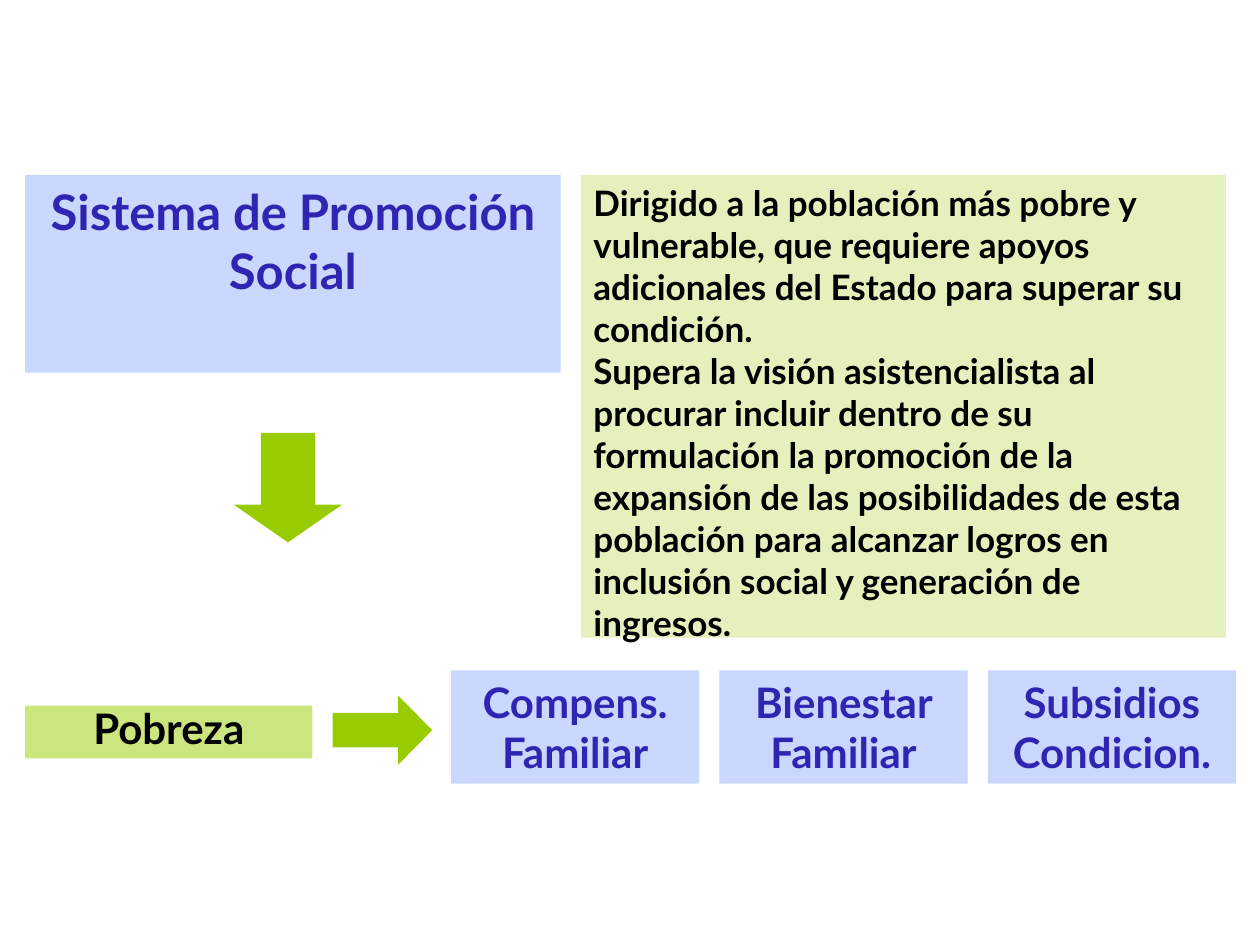
from dataclasses import dataclass
from typing import Optional

from lxml import etree
from pptx import Presentation
from pptx.dml.color import RGBColor
from pptx.enum.shapes import MSO_SHAPE
from pptx.enum.text import MSO_ANCHOR, MSO_AUTO_SIZE, PP_ALIGN
from pptx.oxml.ns import qn
from pptx.shapes.autoshape import Shape
from pptx.slide import Slide
from pptx.util import Emu, Pt

RECTANGLE = MSO_SHAPE.RECTANGLE
RIGHT_ARROW = MSO_SHAPE.RIGHT_ARROW
TOP, MIDDLE = MSO_ANCHOR.TOP, MSO_ANCHOR.MIDDLE
LEFT, CENTER = PP_ALIGN.LEFT, PP_ALIGN.CENTER
FIT_SHAPE = MSO_AUTO_SIZE.SHAPE_TO_FIT_TEXT

PX = 9144
SLIDE_WIDTH, SLIDE_HEIGHT = 1000, 750


@dataclass(frozen=True)
class Theme:
    font: str = "Lato"
    blue: str = "3366FF"
    green: str = "99CC00"
    indigo: str = "2F25B3"
    black: str = "000000"
    title_size: int = 28
    label_size: int = 24
    body_size: int = 20
    light: int = 26
    medium: int = 50


THEME = Theme()


@dataclass(frozen=True)
class Frame:
    left: int
    top: int
    width: int
    height: int


@dataclass(frozen=True)
class Panel:
    frame: Frame
    paragraphs: tuple[str, ...]
    size: int = THEME.label_size
    fill: str = THEME.blue
    opacity: int = THEME.light
    color: str = THEME.indigo
    alignment: PP_ALIGN = CENTER
    anchor: MSO_ANCHOR = TOP
    line_spacing: float = 1.0


@dataclass(frozen=True)
class Arrow:
    frame: Frame
    head: float
    rotation: int = 0


TITLE = Panel(Frame(20, 139, 425, 103), ("Sistema de Promoción Social",), THEME.title_size)
DESCRIPTION = Panel(
    Frame(461, 139, 512, 377),
    (
        "Dirigido a la población más pobre y vulnerable, que requiere apoyos "
        "adicionales del Estado para superar su condición.",
        "Supera la visión asistencialista al procurar incluir dentro de su "
        "formulación la promoción de la expansión de las posibilidades de esta "
        "población para alcanzar logros en inclusión social y generación de ingresos.",
    ),
    THEME.body_size,
    THEME.green,
    color=THEME.black,
    alignment=LEFT,
)
POVERTY = Panel(
    Frame(20, 560, 228, 42),
    ("Pobreza",),
    fill=THEME.green,
    opacity=THEME.medium,
    color=THEME.black,
    anchor=MIDDLE,
    line_spacing=0.8,
)
PROGRAMS = ("Compens. Familiar", "Bienestar Familiar", "Subsidios Condicion.")
PROGRAM_LEFT, PROGRAM_TOP, PROGRAM_STEP = 358, 532, 213
PROGRAM_WIDTH, PROGRAM_HEIGHT = 197, 90
ARROWS = (
    Arrow(Frame(185, 344, 87, 86), 0.348, 90),
    Arrow(Frame(264, 552, 79, 55), 0.493),
)


def place(shape: Shape, frame: Frame) -> None:
    shape.left, shape.top = Emu(frame.left * PX), Emu(frame.top * PX)
    shape.width, shape.height = Emu(frame.width * PX), Emu(frame.height * PX)


def add_shape(slide: Slide, kind: MSO_SHAPE, frame: Frame) -> Shape:
    shape = slide.shapes.add_shape(kind, 0, 0, 0, 0)
    place(shape, frame)
    return shape


def paint(shape: Shape, color: str, opacity: int = 100) -> None:
    shape.fill.solid()
    shape.fill.fore_color.rgb = RGBColor.from_string(color)
    if opacity < 100:
        fill_color = shape._element.spPr.find(qn("a:solidFill")).find(qn("a:srgbClr"))
        etree.SubElement(fill_color, qn("a:alpha")).set("val", str(opacity * 1000))
    shape.line.fill.background()
    shape.shadow.inherit = False


def draw_panel(slide: Slide, panel: Panel, placeholder: Optional[Shape] = None) -> None:
    shape = placeholder or add_shape(slide, RECTANGLE, panel.frame)
    place(shape, panel.frame)
    paint(shape, panel.fill, panel.opacity)
    text_frame = shape.text_frame
    text_frame.word_wrap = True
    text_frame.auto_size = FIT_SHAPE
    text_frame.vertical_anchor = panel.anchor
    for index, text in enumerate(panel.paragraphs):
        paragraph = text_frame.add_paragraph() if index else text_frame.paragraphs[0]
        properties = paragraph._p.get_or_add_pPr()
        properties.set("marL", "0")
        properties.set("indent", "0")
        etree.SubElement(properties, qn("a:buNone"))
        paragraph.alignment = panel.alignment
        paragraph.line_spacing = panel.line_spacing
        paragraph.space_before = Pt(0)
        run = paragraph.add_run()
        run.text = text
        run.font.name = THEME.font
        run.font.size = Pt(panel.size)
        run.font.bold = True
        run.font.color.rgb = RGBColor.from_string(panel.color)


def draw_arrow(slide: Slide, arrow: Arrow) -> None:
    shape = add_shape(slide, RIGHT_ARROW, arrow.frame)
    shape.adjustments[0] = 0.5
    shape.adjustments[1] = arrow.head
    shape.rotation = arrow.rotation
    paint(shape, THEME.green)


def main() -> None:
    presentation = Presentation()
    presentation.slide_width = Emu(SLIDE_WIDTH * PX)
    presentation.slide_height = Emu(SLIDE_HEIGHT * PX)
    slide = presentation.slides.add_slide(presentation.slide_layouts[1])
    draw_panel(slide, TITLE, slide.shapes.title)
    draw_panel(slide, DESCRIPTION, slide.placeholders[1])
    draw_panel(slide, POVERTY)
    for arrow in ARROWS:
        draw_arrow(slide, arrow)
    for index, program in enumerate(PROGRAMS):
        left = PROGRAM_LEFT + index * PROGRAM_STEP
        frame = Frame(left, PROGRAM_TOP, PROGRAM_WIDTH, PROGRAM_HEIGHT)
        draw_panel(slide, Panel(frame, (program,)))
    presentation.save("out.pptx")


if __name__ == "__main__":
    main()
